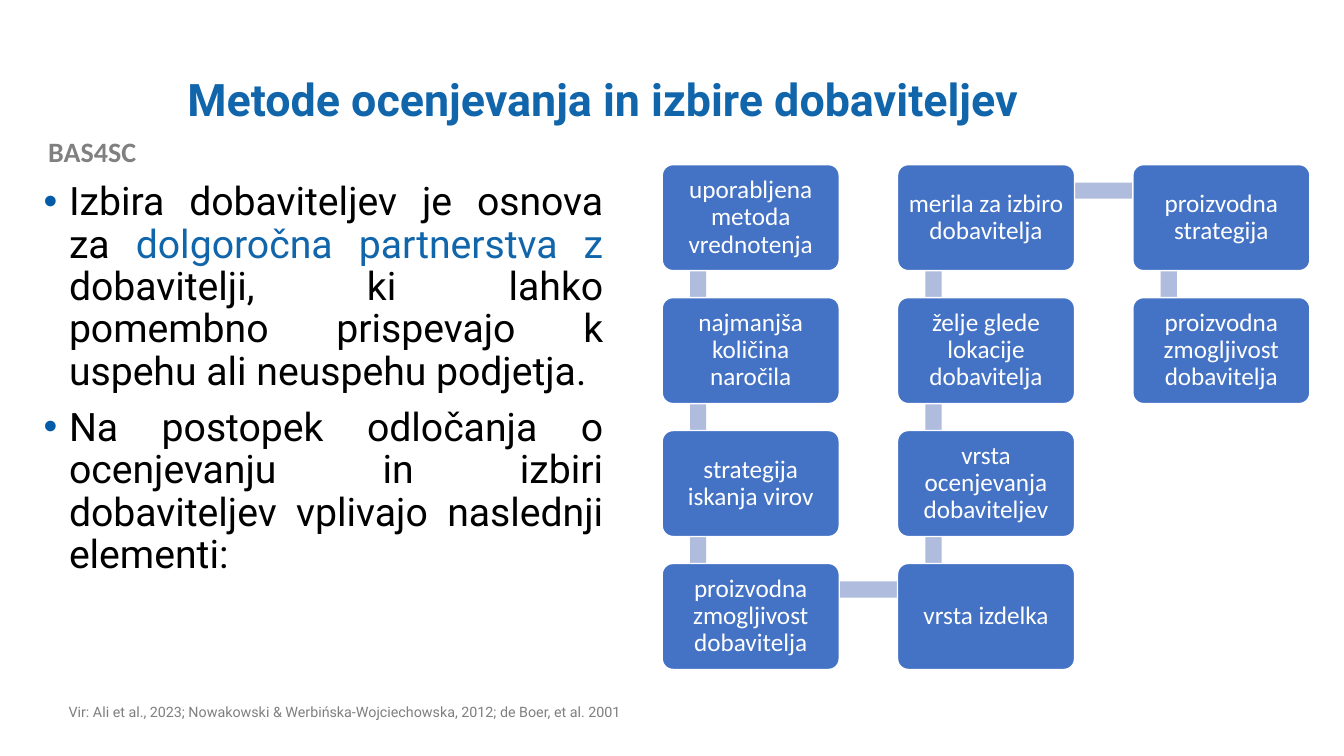
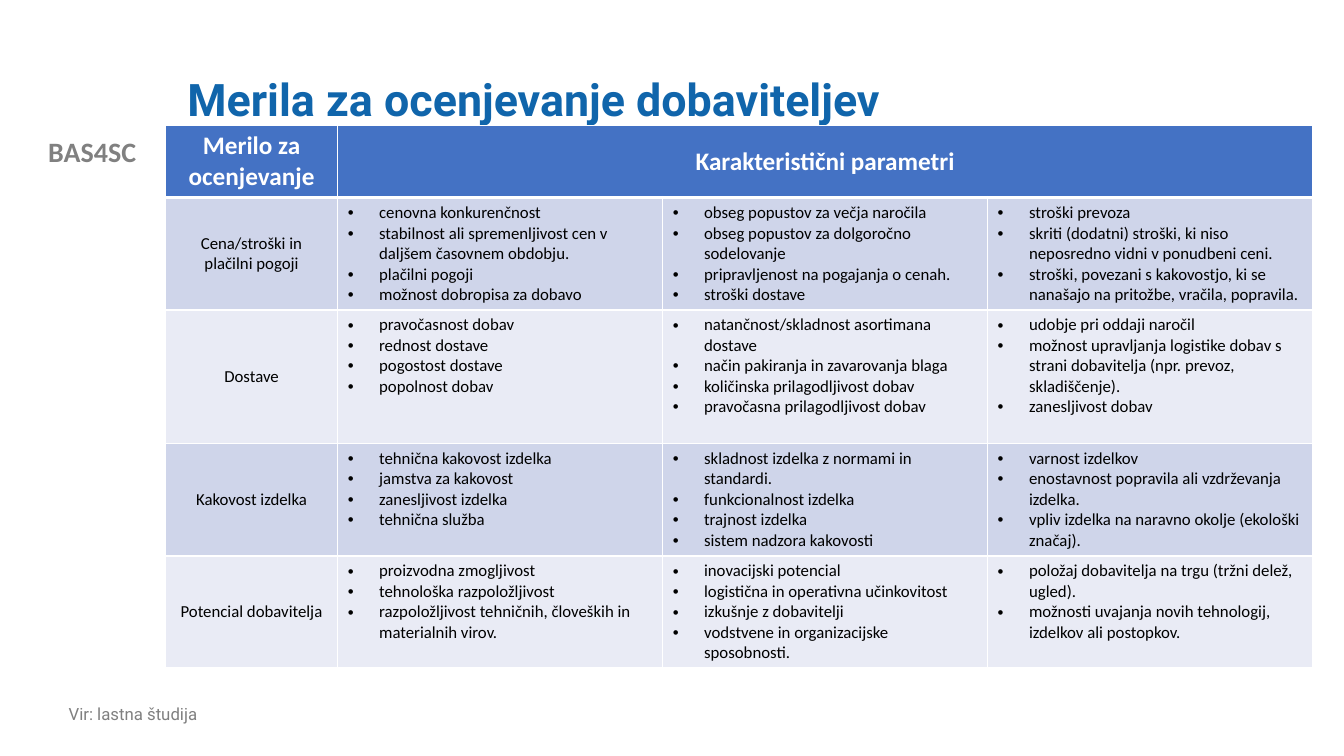
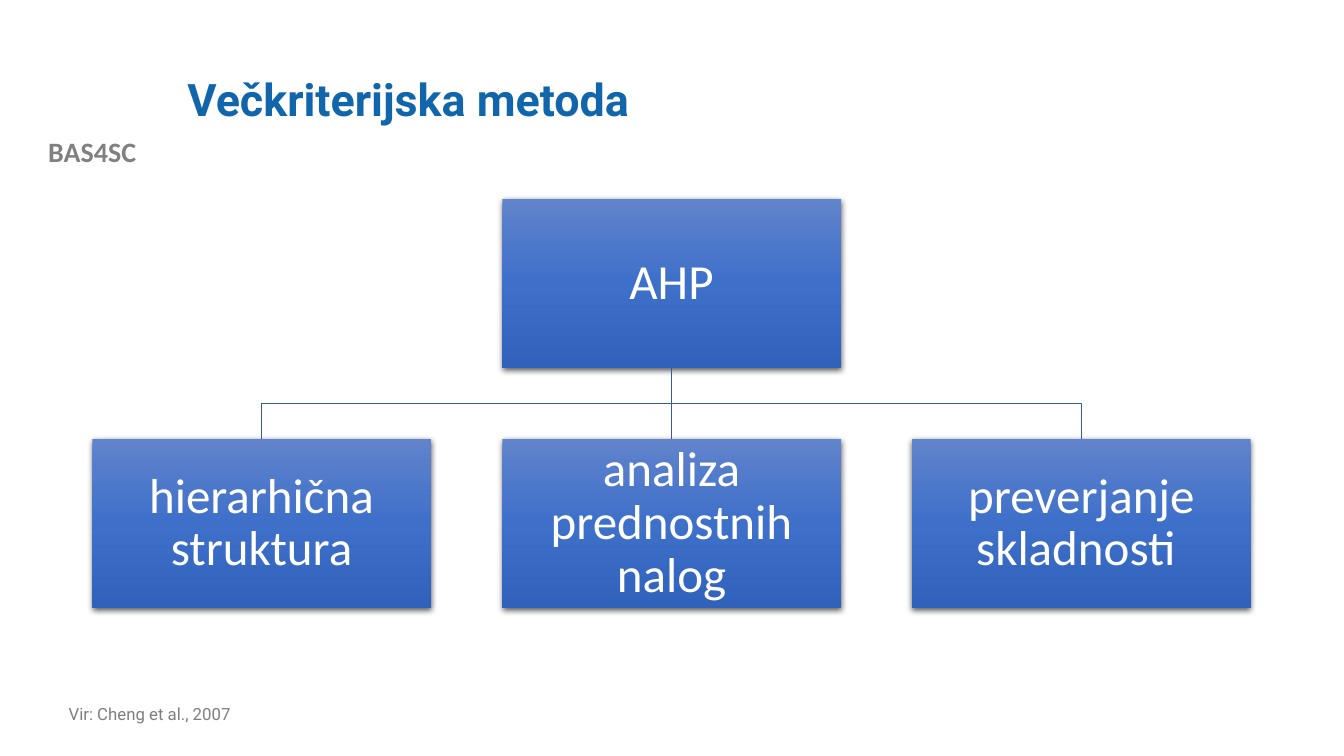
from dataclasses import dataclass
from typing import NamedTuple

from lxml import etree
from pptx import Presentation
from pptx.dml.color import RGBColor
from pptx.enum import shapes, text
from pptx.oxml.ns import qn
from pptx.util import Cm, Pt


@dataclass(frozen=True)
class Theme:
    title: str = "1065AB"
    bullet: str = "015BA6"
    badge: str = "808080"
    source: str = "7F7F7F"
    ink: str = "000000"
    white: str = "FFFFFF"
    node: str = "4472C4"
    strip: str = "B0BCDE"
    tree_line: str = "365B9D"
    bands: tuple = ("CFD5EA", "E9EBF5")
    gradient: tuple = ((0, "6183CB"), (50, "3E70CA"), (100, "3062BB"))
    heading_font: str = "Roboto"
    label_font: str = "Calibri"
    title_size: float = 32
    body_size: float = 28
    badge_size: float = 20
    node_size: float = 18
    tree_size: float = 35
    cell_size: float = 12
    source_size: float = 12
    long_source_size: float = 10.2


THEME = Theme()
CENTER = text.PP_ALIGN.CENTER
MIDDLE = text.MSO_ANCHOR.MIDDLE


class Box(NamedTuple):
    """Left, top, width and height in centimetres."""
    left: float
    top: float
    width: float
    height: float

    def lengths(self) -> list:
        return [Cm(value) for value in self]


class Step(NamedTuple):
    column: int
    row: int
    label: str


class Criterion(NamedTuple):
    name: str
    parameters: tuple


STEPS = (
    Step(0, 0, "uporabljena metoda vrednotenja"),
    Step(0, 1, "najmanjša količina naročila"),
    Step(0, 2, "strategija iskanja virov"),
    Step(0, 3, "proizvodna zmogljivost dobavitelja"),
    Step(1, 3, "vrsta izdelka"),
    Step(1, 2, "vrsta ocenjevanja dobaviteljev"),
    Step(1, 1, "želje glede lokacije dobavitelja"),
    Step(1, 0, "merila za izbiro dobavitelja"),
    Step(2, 0, "proizvodna strategija"),
    Step(2, 1, "proizvodna zmogljivost dobavitelja"),
)

CRITERIA = (
    Criterion("Cena/stroški in plačilni pogoji", (
        ("cenovna konkurenčnost",
         "stabilnost ali spremenljivost cen v daljšem časovnem obdobju.",
         "plačilni pogoji", "možnost dobropisa za dobavo"),
        ("obseg popustov za večja naročila",
         "obseg popustov za dolgoročno sodelovanje",
         "pripravljenost na pogajanja o cenah.", "stroški dostave"),
        ("stroški prevoza",
         "skriti (dodatni) stroški, ki niso neposredno vidni v ponudbeni ceni.",
         "stroški, povezani s kakovostjo, ki se nanašajo na pritožbe, vračila, popravila."),
    )),
    Criterion("Dostave", (
        ("pravočasnost dobav", "rednost dostave", "pogostost dostave", "popolnost dobav"),
        ("natančnost/skladnost asortimana dostave",
         "način pakiranja in zavarovanja blaga",
         "količinska prilagodljivost dobav", "pravočasna prilagodljivost dobav"),
        ("udobje pri oddaji naročil",
         "možnost upravljanja logistike dobav s strani dobavitelja (npr. prevoz, skladiščenje).",
         "zanesljivost dobav"),
    )),
    Criterion("Kakovost izdelka", (
        ("tehnična kakovost izdelka", "jamstva za kakovost",
         "zanesljivost izdelka", "tehnična služba"),
        ("skladnost izdelka z normami in standardi.", "funkcionalnost izdelka",
         "trajnost izdelka", "sistem nadzora kakovosti"),
        ("varnost izdelkov", "enostavnost popravila ali vzdrževanja izdelka.",
         "vpliv izdelka na naravno okolje (ekološki značaj)."),
    )),
    Criterion("Potencial dobavitelja", (
        ("proizvodna zmogljivost", "tehnološka razpoložljivost",
         "razpoložljivost tehničnih, človeških in materialnih virov."),
        ("inovacijski potencial", "logistična in operativna učinkovitost",
         "izkušnje z dobavitelji", "vodstvene in organizacijske sposobnosti."),
        ("položaj dobavitelja na trgu (tržni delež, ugled).",
         "možnosti uvajanja novih tehnologij, izdelkov ali postopkov."),
    )),
)


def rgb(colour: str) -> RGBColor:
    return RGBColor.from_string(colour)


def add_xml(parent, tag: str, **attributes):
    return etree.SubElement(parent, qn(tag), {k: str(v) for k, v in attributes.items()})


def style(para, size: float, colour: str, font: str = THEME.label_font,
          bold: bool = False, align=None, spacing: float | None = None) -> None:
    para.font.size = Pt(size)
    para.font.name = font
    para.font.bold = bold
    para.font.color.rgb = rgb(colour)
    if align is not None:
        para.alignment = align
    if spacing is not None:
        para.line_spacing = spacing


def add_bullet(para, indent: float, colour: str) -> None:
    """Give the paragraph a hanging bullet; indent is in centimetres."""
    properties = para._p.get_or_add_pPr()
    properties.set("marL", str(Cm(indent)))
    properties.set("indent", str(-Cm(indent)))
    add_xml(add_xml(properties, "a:buClr"), "a:srgbClr", val=colour)
    add_xml(properties, "a:buFont", typeface="Arial")
    add_xml(properties, "a:buChar", char="•")


def add_text(page, box: Box, content: str = ""):
    frame = page.shapes.add_textbox(*box.lengths()).text_frame
    frame.word_wrap = True
    frame.text = content
    return frame


def add_page(deck, title: str, source: str,
             source_size: float = THEME.source_size, source_spacing: float = 0.9):
    """Add a slide with the shared title, project badge and source line."""
    page = deck.slides.add_slide(deck.slide_layouts[5])
    holder = page.shapes.title
    holder.left, holder.top, holder.width, holder.height = Box(4.47, 1.02, 27.08, 3.1).lengths()
    frame = holder.text_frame
    frame.text = title
    frame.auto_size = text.MSO_AUTO_SIZE.NONE
    frame.vertical_anchor = MIDDLE
    style(frame.paragraphs[0], THEME.title_size, THEME.title, THEME.heading_font,
          True, text.PP_ALIGN.LEFT, 0.9)
    badge = add_text(page, Box(0, 3.26, 4.65, 1.12), "BAS4SC")
    style(badge.paragraphs[0], THEME.badge_size, THEME.badge, bold=True, align=CENTER)
    footer = add_text(page, Box(1.48, 17.67, 14.99, 0.89), source)
    style(footer.paragraphs[0], source_size, THEME.source, THEME.heading_font,
          spacing=source_spacing)
    return page


def add_block(page, kind, box: Box, fill: str | None = None):
    """Add a shape without line or shadow."""
    block = page.shapes.add_shape(kind, *box.lengths())
    block.shadow.inherit = False
    block.line.fill.background()
    if fill:
        block.fill.solid()
        block.fill.fore_color.rgb = rgb(fill)
    return block


def set_label(block, label: str, size: float, margin: float) -> None:
    frame = block.text_frame
    frame.word_wrap = True
    frame.margin_left = frame.margin_right = Cm(margin)
    frame.margin_top = frame.margin_bottom = Cm(margin)
    frame.vertical_anchor = MIDDLE
    frame.text = label
    style(frame.paragraphs[0], size, THEME.white, align=CENTER, spacing=0.9)


def add_body(page) -> None:
    frame = add_text(page, Box(0.85, 4.46, 14.6, 12.09))
    points = (
        (("Izbira dobaviteljev je osnova za ", THEME.ink),
         ("dolgoročna partnerstva z ", THEME.title),
         ("dobavitelji, ki lahko pomembno prispevajo k uspehu ali neuspehu podjetja.",
          THEME.ink)),
        (("Na postopek odločanja o ocenjevanju in izbiri dobaviteljev "
          "vplivajo naslednji elementi:", THEME.ink),),
    )
    for index, spans in enumerate(points):
        para = frame.add_paragraph() if index else frame.paragraphs[0]
        add_bullet(para, 0.64, THEME.bullet)
        style(para, THEME.body_size, THEME.ink, THEME.heading_font,
              align=text.PP_ALIGN.JUSTIFY, spacing=0.9)
        if index:
            para.space_before = Pt(10)
        for content, colour in spans:
            span = para.add_run()
            span.text = content
            if colour != THEME.ink:
                span.font.color.rgb = rgb(colour)


def add_snake(page) -> None:
    """Draw the steps on a grid, with a strip joining each one to the next."""
    left, top, pitch_x, pitch_y, thick = 16.69, 4.15, 5.93, 3.35, 0.41
    for here, after in zip(STEPS, STEPS[1:]):
        x = left + min(here.column, after.column) * pitch_x
        y = top + min(here.row, after.row) * pitch_y
        if here.column == after.column:
            strip = Box(x + 0.7, y + 0.67, thick, pitch_y)
        else:
            strip = Box(x + 0.91, y + 0.45, pitch_x, thick)
        add_block(page, shapes.MSO_SHAPE.RECTANGLE, strip, THEME.strip)
    for step in STEPS:
        box = Box(left + step.column * pitch_x, top + step.row * pitch_y, 4.46, 2.67)
        node = add_block(page, shapes.MSO_SHAPE.ROUNDED_RECTANGLE, box, THEME.node)
        node.adjustments[0] = 0.1
        node.line.color.rgb = rgb(THEME.white)
        node.line.width = Pt(1)
        set_label(node, step.label, THEME.node_size, 0.18)


def format_cell(cell, fill: str, bottom: float = 1) -> None:
    """Give the cell white borders and a fill; bottom is a width in points."""
    properties = cell._tc.get_or_add_tcPr()
    for side, width in (("L", 1), ("R", 1), ("T", 1), ("B", bottom)):
        line = add_xml(properties, f"a:ln{side}", w=Pt(width))
        add_xml(add_xml(line, "a:solidFill"), "a:srgbClr", val=THEME.white)
    cell.fill.solid()
    cell.fill.fore_color.rgb = rgb(fill)


def fill_centred(cell, content: str, size: float, colour: str, bold: bool = False) -> None:
    cell.text = content
    cell.vertical_anchor = MIDDLE
    style(cell.text_frame.paragraphs[0], size, colour, bold=bold, align=CENTER)


def add_criteria_table(page) -> None:
    widths = (4.34, 8.19, 8.19, 8.19)
    heights = (1.81, 2.83, 3.36, 2.84, 2.82)
    box = Box(4.17, 3.17, sum(widths), sum(heights))
    table = page.shapes.add_table(len(heights), len(widths), *box.lengths()).table
    for column, width in zip(table.columns, widths):
        column.width = Cm(width)
    for row, height in zip(table.rows, heights):
        row.height = Cm(height)
    for column in range(len(widths)):
        format_cell(table.cell(0, column), THEME.node, bottom=3)
    table.cell(0, 1).merge(table.cell(0, 3))
    for column, heading in enumerate(("Merilo za ocenjevanje", "Karakteristični parametri")):
        fill_centred(table.cell(0, column), heading, THEME.node_size, THEME.white, True)
    for row, criterion in enumerate(CRITERIA, 1):
        for column in range(len(widths)):
            format_cell(table.cell(row, column), THEME.bands[(row - 1) % 2])
        fill_centred(table.cell(row, 0), criterion.name, THEME.cell_size, THEME.ink)
        for column, items in enumerate(criterion.parameters, 1):
            frame = table.cell(row, column).text_frame
            frame.text = "\n".join(items)
            for para in frame.paragraphs:
                add_bullet(para, 0.79, THEME.ink)
                style(para, THEME.cell_size, THEME.ink)


def add_tree_box(page, left: float, top: float, label: str):
    """Add a labelled box with a vertical gradient and a soft shadow."""
    block = add_block(page, shapes.MSO_SHAPE.RECTANGLE, Box(left, top, 8.53, 4.27))
    block.fill.gradient()
    block.fill.gradient_angle = 270
    properties = block._element.spPr
    stops = properties.find(qn("a:gradFill")).find(qn("a:gsLst"))
    stops.clear()
    for position, colour in THEME.gradient:
        add_xml(add_xml(stops, "a:gs", pos=position * 1000), "a:srgbClr", val=colour)
    shadow = add_xml(properties.find(qn("a:effectLst")), "a:outerShdw", blurRad=Pt(4.5),
                     dist=Pt(1.5), dir=5400000, algn="ctr", rotWithShape=0)
    add_xml(add_xml(shadow, "a:srgbClr", val=THEME.ink), "a:alpha", val=63000)
    set_label(block, label, THEME.tree_size, 0.05)
    return block


def style_line(line) -> None:
    line.color.rgb = rgb(THEME.tree_line)
    line.width = Pt(1)


def add_trunk(page, root, child) -> None:
    """Join two boxes that stand one above the other."""
    trunk = page.shapes.add_connector(shapes.MSO_CONNECTOR.STRAIGHT, 0, 0, 0, 0)
    trunk.begin_connect(root, 2)
    trunk.end_connect(child, 0)
    style_line(trunk.line)
    add_xml(trunk._element.spPr, "a:effectLst")


def add_branch(page, root, child) -> None:
    """Draw an elbow down from the root, across, and down to the child."""
    start, end = (box.left + box.width // 2 for box in (root, child))
    bottom = root.top + root.height
    bar = (bottom + child.top) // 2
    outline = page.shapes.build_freeform(start, bottom)
    outline.add_line_segments([(start, bar), (end, bar), (end, child.top)], close=False)
    branch = outline.convert_to_shape()
    branch.shadow.inherit = False
    branch.fill.background()
    style_line(branch.line)


def add_tree(page) -> None:
    left, pitch, root_top, child_top = 2.33, 10.33, 5.01, 11.06
    root = add_tree_box(page, left + pitch, root_top, "AHP")
    labels = ("hierarhična struktura", "analiza prednostnih nalog", "preverjanje skladnosti ")
    first, middle, last = [add_tree_box(page, left + index * pitch, child_top, label)
                           for index, label in enumerate(labels)]
    add_trunk(page, root, middle)
    for child in (first, last):
        add_branch(page, root, child)


def main() -> None:
    deck = Presentation()
    deck.slide_width, deck.slide_height = Cm(33.87), Cm(19.05)
    methods = add_page(
        deck, "Metode ocenjevanja in izbire dobaviteljev",
        "Vir: Ali et al., 2023; Nowakowski & Werbińska-Wojciechowska, 2012; "
        "de Boer, et al. 2001", THEME.long_source_size, 0.8)
    add_body(methods)
    add_snake(methods)
    add_criteria_table(add_page(deck, "Merila za ocenjevanje dobaviteljev",
                                "Vir: lastna študija"))
    add_tree(add_page(deck, "Večkriterijska metoda", "Vir: Cheng et al., 2007"))
    deck.save("out.pptx")


if __name__ == "__main__":
    main()
